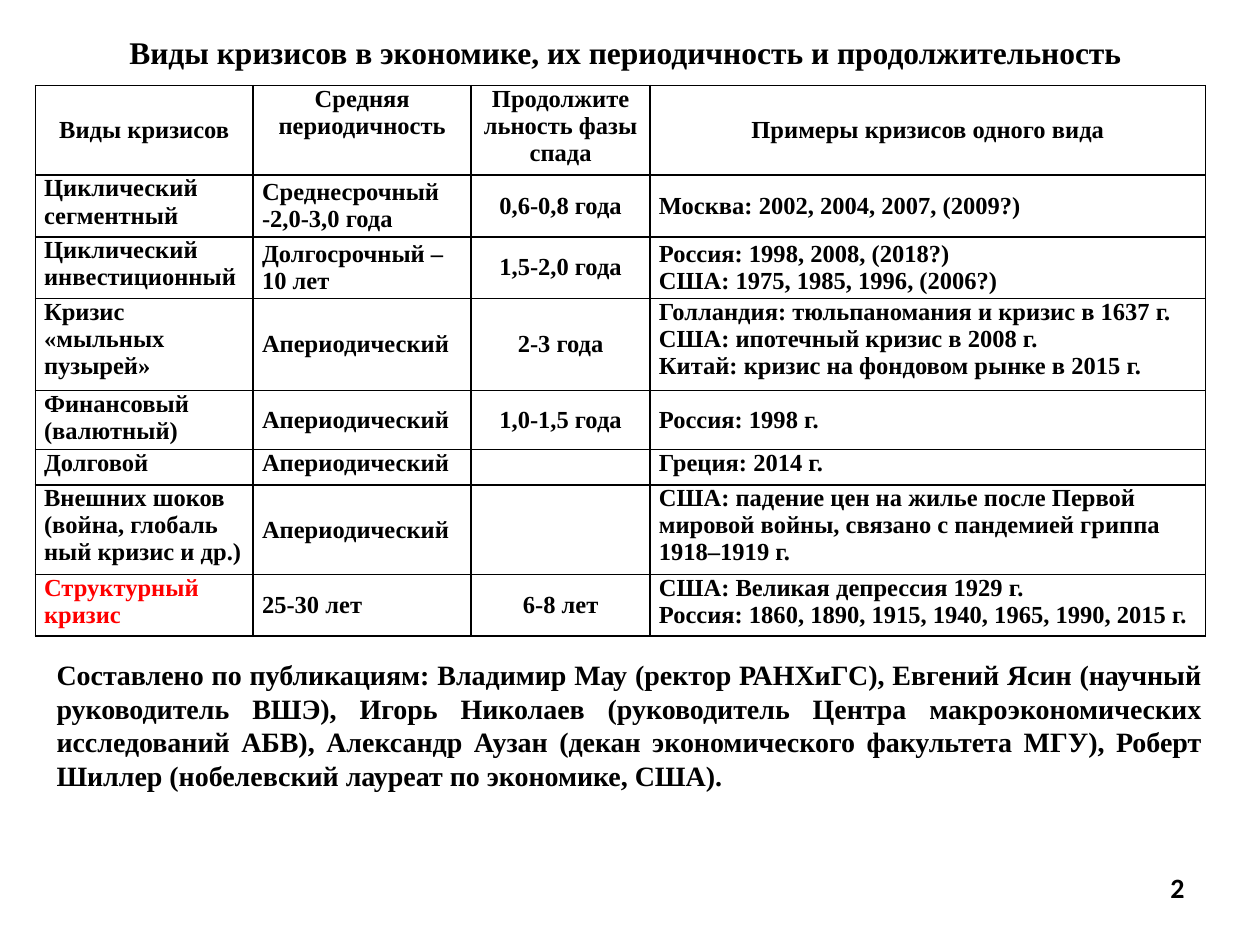
from dataclasses import dataclass

from lxml.etree import SubElement
from pptx import Presentation
from pptx.dml.color import RGBColor
from pptx.enum.text import MSO_ANCHOR, MSO_AUTO_SIZE, PP_ALIGN
from pptx.oxml.ns import qn
from pptx.util import Inches, Pt


@dataclass(frozen=True)
class Theme:
    ink: RGBColor = RGBColor(0, 0, 0)
    accent: RGBColor = RGBColor(255, 0, 0)
    font: str = "Times New Roman"
    number_font: str = "Calibri"
    title_size: int = 18
    cell_size: int = 14
    note_size: int = 16
    border: int = 1


THEME = Theme()

TITLE = "Виды кризисов в экономике, их периодичность и продолжительность"
NOTE = (
    "Составлено по публикациям: Владимир Мау (ректор РАНХиГС), Евгений Ясин "
    "(научный руководитель ВШЭ), Игорь Николаев (руководитель Центра "
    "макроэкономических исследований АБВ), Александр Аузан (декан экономического "
    "факультета МГУ), Роберт Шиллер (нобелевский лауреат по экономике, США)."
)
APERIODIC = "Апериодический"
ROWS = [
    ("Виды кризисов", "Средняя периодичность", "Продолжите льность фазы спада",
     "Примеры кризисов одного вида"),
    ("Циклический сегментный", "Среднесрочный -2,0-3,0 года", "0,6-0,8 года",
     "Москва: 2002, 2004, 2007, (2009?)"),
    ("Циклический инвестиционный", "Долгосрочный – 10 лет", "1,5-2,0 года",
     "Россия: 1998, 2008, (2018?)\nСША: 1975, 1985, 1996, (2006?)"),
    ("Кризис «мыльных пузырей»", APERIODIC, "2-3 года",
     "Голландия: тюльпаномания и кризис в 1637 г.\n"
     "США: ипотечный кризис в 2008 г.\n"
     "Китай: кризис на фондовом рынке в 2015 г."),
    ("Финансовый (валютный)", APERIODIC, "1,0-1,5 года", "Россия: 1998 г."),
    ("Долговой", APERIODIC, "", "Греция: 2014 г."),
    ("Внешних шоков (война, глобаль ный кризис и др.)", APERIODIC, "",
     "США: падение цен на жилье после Первой мировой войны, связано с пандемией "
     "гриппа 1918–1919 г."),
    ("Структурный кризис", "25-30 лет", "6-8 лет",
     "США: Великая депрессия 1929 г.\n"
     "Россия: 1860, 1890, 1915, 1940, 1965, 1990, 2015 г."),
]
COLUMN_WIDTHS = (1.73, 1.73, 1.42, 4.41)
ROW_HEIGHTS = (0.71, 0.49, 0.49, 0.73, 0.47, 0.23, 0.71, 0.49)
COLUMN_ALIGNS = (PP_ALIGN.LEFT, PP_ALIGN.JUSTIFY, PP_ALIGN.CENTER, PP_ALIGN.JUSTIFY)

# Cells (row, column) that depart from the column rules
LEFT_CELLS = {(1, 1), (2, 1), (6, 3), (7, 3)}
TOP_CELLS = {(0, 1), (0, 2), (3, 3), (5, 1), (5, 3), (6, 3), (7, 3)}
ACCENT_CELL = (7, 0)


def write_text(frame, text, size, align, color=THEME.ink, font=THEME.font):
    for index, line in enumerate(text.split("\n")):
        para = frame.paragraphs[0] if index == 0 else frame.add_paragraph()
        para.alignment = align
        span = para.add_run()
        span.text = line
        span.font.size = Pt(size)
        span.font.name = font
        span.font.bold = True
        span.font.color.rgb = color


def place(shape, box):
    shape.left, shape.top, shape.width, shape.height = (Inches(n) for n in box)


def add_title(page, box):
    title = page.shapes.title
    place(title, box)
    frame = title.text_frame
    frame.auto_size = MSO_AUTO_SIZE.NONE
    frame.vertical_anchor = MSO_ANCHOR.TOP
    write_text(frame, TITLE, THEME.title_size, PP_ALIGN.CENTER)


def add_text(page, box, text, align, anchor=MSO_ANCHOR.TOP, font=THEME.font):
    frame = page.shapes.add_textbox(*(Inches(n) for n in box)).text_frame
    frame.word_wrap = True
    frame.vertical_anchor = anchor
    write_text(frame, text, THEME.note_size, align, font=font)


def draw_borders(cell):
    properties = cell._tc.get_or_add_tcPr()
    for position, side in enumerate(("lnL", "lnR", "lnT", "lnB")):
        line = SubElement(properties, qn(f"a:{side}"), w=str(Pt(THEME.border)))
        fill = SubElement(line, qn("a:solidFill"))
        SubElement(fill, qn("a:srgbClr"), val=str(THEME.ink))
        properties.insert(position, line)


def cell_layout(row, column):
    if row == 0:
        align = PP_ALIGN.CENTER
    elif (row, column) in LEFT_CELLS:
        align = PP_ALIGN.LEFT
    else:
        align = COLUMN_ALIGNS[column]
    at_top = (row, column) in TOP_CELLS or (column == 0 and row > 0)
    return align, MSO_ANCHOR.TOP if at_top else MSO_ANCHOR.MIDDLE


def add_crisis_table(page, box):
    table = page.shapes.add_table(
        len(ROWS), len(COLUMN_WIDTHS), *(Inches(n) for n in box)).table
    table.first_row = table.horz_banding = False
    for column, width in zip(table.columns, COLUMN_WIDTHS):
        column.width = Inches(width)
    for row, height in zip(table.rows, ROW_HEIGHTS):
        row.height = Inches(height)

    for r, texts in enumerate(ROWS):
        for c, text in enumerate(texts):
            cell = table.cell(r, c)
            align, cell.vertical_anchor = cell_layout(r, c)
            cell.margin_left = cell.margin_right = Inches(0.07)
            cell.margin_top = cell.margin_bottom = 0
            cell.fill.background()
            draw_borders(cell)
            color = THEME.accent if (r, c) == ACCENT_CELL else THEME.ink
            write_text(cell.text_frame, text, THEME.cell_size, align, color)


def main():
    deck = Presentation()
    deck.slide_width, deck.slide_height = Inches(10), Inches(7.5)
    page = deck.slides.add_slide(deck.slide_layouts.get_by_name("Title Only"))

    add_title(page, (0.12, 0.21, 9.69, 0.4))
    add_crisis_table(page, (0.28, 0.68, sum(COLUMN_WIDTHS), sum(ROW_HEIGHTS)))
    # Sources below the table, then the page number
    add_text(page, (0.35, 5.17, 9.29, 1.18), NOTE, PP_ALIGN.JUSTIFY)
    add_text(page, (7.17, 6.74, 2.33, 0.61), "2", PP_ALIGN.RIGHT,
             MSO_ANCHOR.MIDDLE, THEME.number_font)

    deck.save("out.pptx")


if __name__ == "__main__":
    main()
